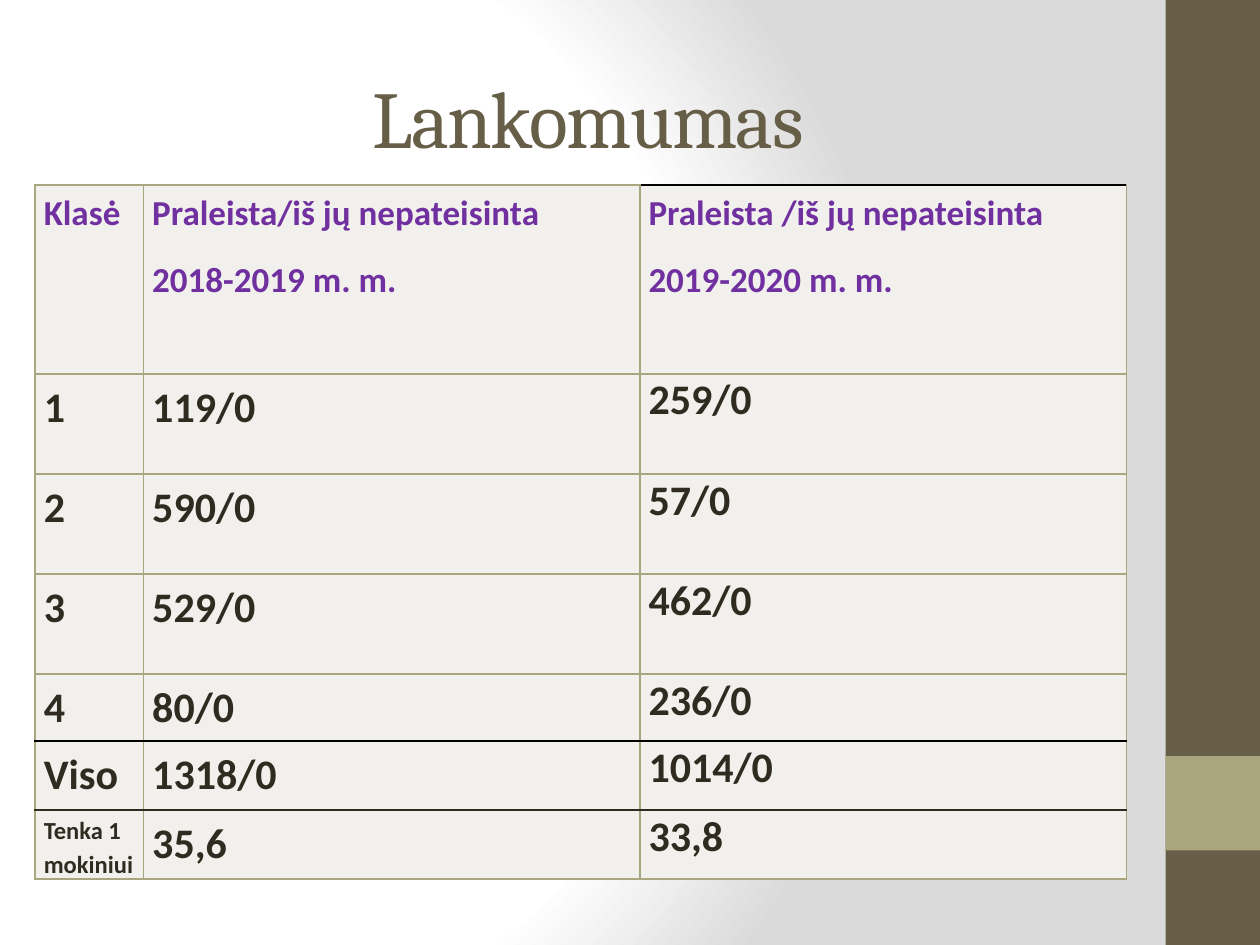
from pptx import Presentation
from pptx.dml.color import RGBColor
from pptx.enum.shapes import MSO_SHAPE
from pptx.enum.text import MSO_ANCHOR, PP_ALIGN
from pptx.oxml import parse_xml
from pptx.oxml.ns import nsdecls, qn
from pptx.util import Pt

BROWN, OLIVE, INK, PURPLE = "675E47", "A9A57C", "2F2B20", "7030A0"
BLACK, CELL_FILL = "000000", "F1F0EC"


def color(hex_value):
    return RGBColor.from_string(hex_value)


def add_span(para, text, name, size, hex_value, bold=False):
    span = para.add_run()
    span.text = text
    for key, value in {"name": name, "size": Pt(size), "bold": bold}.items():
        setattr(span.font, key, value)
    span.font.color.rgb = color(hex_value)
    return span


deck = Presentation()
deck.slide_width, deck.slide_height = Pt(720), Pt(540)
page = deck.slides.add_slide(deck.slide_layouts[6])

# Background: radial gradient
page.background.fill.gradient()
gradient = page.element.find(".//" + qn("a:gradFill"))
stops = "".join(
    f'<a:gs pos="{percent * 1000}"><a:srgbClr val="{hex_value}"/></a:gs>'
    for percent, hex_value in [(0, "FFFFFF"), (75, "FFFFFF"), (100, "DADADA")]
)
gradient.getparent().replace(gradient, parse_xml(
    f'<a:gradFill {nsdecls("a")} rotWithShape="1"><a:gsLst>{stops}</a:gsLst>'
    '<a:path path="circle"><a:fillToRect l="20000" t="50000" r="100000" b="50000"/>'
    "</a:path></a:gradFill>"
))

# Side band and its accent
for top, height, hex_value in [(0, 540, BROWN), (432, 54, OLIVE)]:
    band = page.shapes.add_shape(MSO_SHAPE.RECTANGLE, Pt(666), Pt(top), Pt(54), Pt(height))
    band.shadow.inherit = False
    band.fill.solid()
    band.fill.fore_color.rgb = color(hex_value)
    band.line.fill.background()

# Title
title = page.shapes.add_textbox(Pt(36), Pt(21.6), Pt(600), Pt(90))
title.text_frame.word_wrap = True
title.text_frame.vertical_anchor = MSO_ANCHOR.MIDDLE
para = title.text_frame.paragraphs[0]
para.alignment = PP_ALIGN.CENTER
span = add_span(para, "Lankomumas", "Cambria", 46, BROWN)
span.font._element.set("spc", "-100")

# Attendance table
rows = [
    ("Klasė", "Praleista/iš jų nepateisinta\n2018-2019 m. m.",
     "Praleista /iš jų nepateisinta\n2019-2020 m. m."),
    ("1", "119/0", "259/0"),
    ("2", "590/0", "57/0"),
    ("3", "529/0", "462/0"),
    ("4", "80/0", "236/0"),
    ("Viso", "1318/0", "1014/0"),
    ("Tenka 1 mokiniui", "35,6", "33,8"),
]
column_widths = [62, 283.6, 278]
row_heights = [108, 57.2, 57.2, 57.2, 38.4, 39.4, 37.6]
rule_below = {4: BLACK, 5: INK}
margins = {"margin_left": 5, "margin_top": 0.75, "margin_right": 5, "margin_bottom": 0}

table = page.shapes.add_table(
    len(rows), len(column_widths), Pt(20), Pt(105.6),
    Pt(sum(column_widths)), Pt(sum(row_heights)),
).table
table.first_row = table.horz_banding = False
for column, width in zip(table.columns, column_widths):
    column.width = Pt(width)
for row, height in zip(table.rows, row_heights):
    row.height = Pt(height)

for r, texts in enumerate(rows):
    for c, text in enumerate(texts):
        cell = table.cell(r, c)
        for key, value in margins.items():
            setattr(cell, key, Pt(value))

        top_color = BLACK if (r, c) == (0, 2) else rule_below.get(r - 1, OLIVE)
        borders = {"lnL": OLIVE, "lnR": OLIVE, "lnT": top_color,
                   "lnB": rule_below.get(r, OLIVE)}
        properties = cell._tc.get_or_add_tcPr()
        for tag, hex_value in borders.items():
            properties.append(parse_xml(
                f'<a:{tag} {nsdecls("a")} w="12700"><a:solidFill>'
                f'<a:srgbClr val="{hex_value}"/></a:solidFill></a:{tag}>'
            ))
        cell.fill.solid()
        cell.fill.fore_color.rgb = color(CELL_FILL)

        header = r == 0
        size = 20 if header else 14 if (r, c) == (6, 0) else 24
        for i, line in enumerate(text.split("\n")):
            frame = cell.text_frame
            para = frame.add_paragraph() if i else frame.paragraphs[0]
            if header or c < 2:
                para.line_spacing = 1.15
                para.space_after = Pt(10)
            add_span(para, line, "Calibri", size, PURPLE if header else INK, bold=True)

deck.save("out.pptx")
